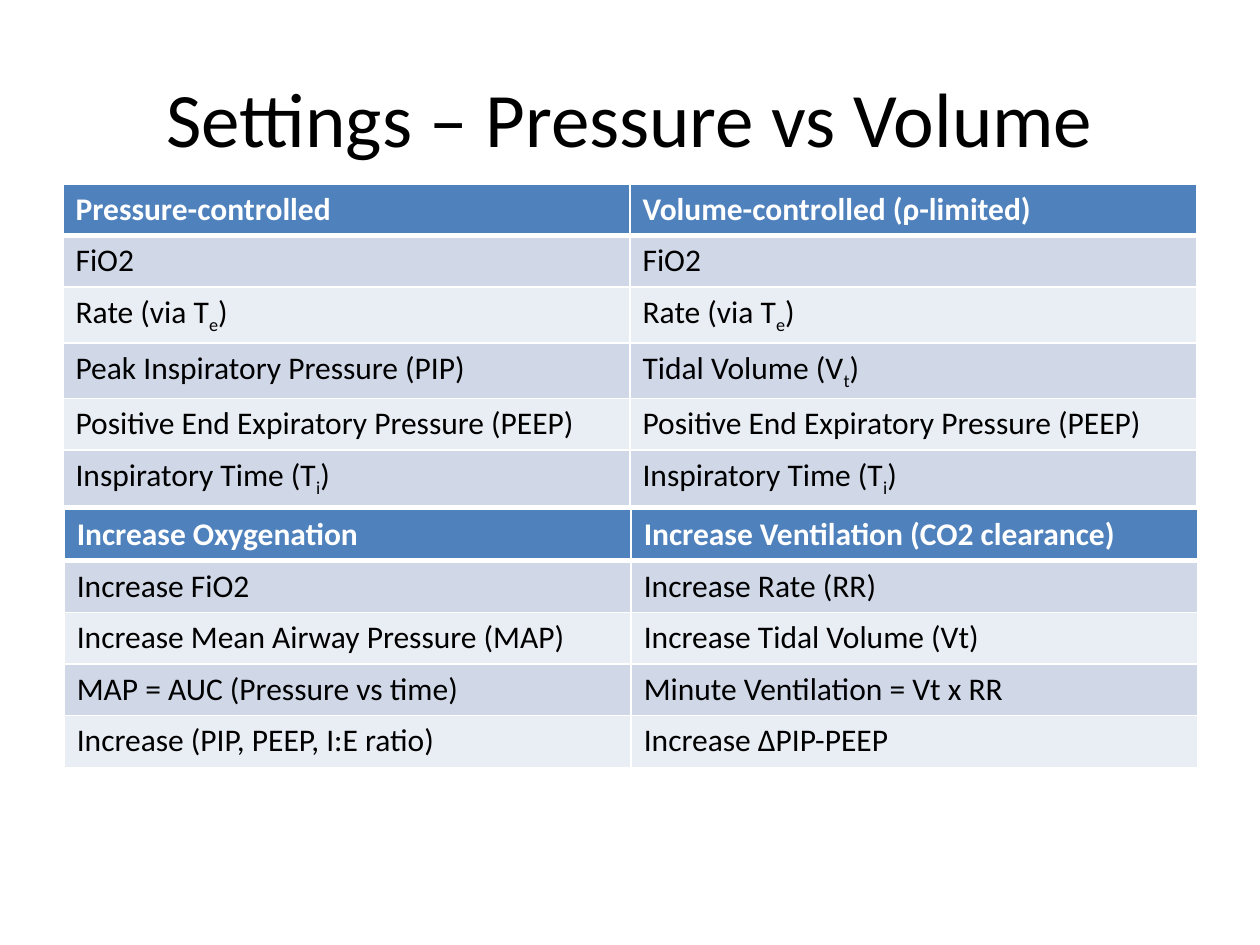
from lxml.etree import SubElement
from pptx import Presentation
from pptx.dml.color import RGBColor
from pptx.enum.text import MSO_ANCHOR, PP_ALIGN
from pptx.oxml.ns import qn
from pptx.util import Inches, Pt

TITLE = "Settings – Pressure vs Volume"

# Text between two bars is set as a subscript.
SETTINGS = [
    ("Pressure-controlled", "Volume-controlled (ρ-limited)"),
    ("FiO2", "FiO2"),
    ("Rate (via T|e|)", "Rate (via T|e|)"),
    ("Peak Inspiratory Pressure (PIP)", "Tidal Volume (V|t|)"),
    ("Positive End Expiratory Pressure (PEEP)",
     "Positive End Expiratory Pressure (PEEP)"),
    ("Inspiratory Time (T|i|)", "Inspiratory Time (T|i|)"),
]
GOALS = [
    ("Increase Oxygenation", "Increase Ventilation (CO2 clearance)"),
    ("Increase FiO2", "Increase Rate (RR)"),
    ("Increase Mean Airway Pressure (MAP)", "Increase Tidal Volume (Vt)"),
    ("MAP = AUC (Pressure vs time)", "Minute Ventilation = Vt x RR"),
    ("Increase (PIP, PEEP, I:E ratio)", "Increase ∆PIP-PEEP"),
]
TABLES = [(0.5, 1.46, SETTINGS), (0.51, 4.04, GOALS)]

COLORS = {"header": "4F81BD", "odd": "D0D8E8", "even": "E9EDF4",
          "light": "FFFFFF", "dark": "000000"}
FONT = "Calibri"
TABLE_WIDTH, ROW_HEIGHT = 9, 0.41
THIN, THICK = 1, 3


def color(name):
    return RGBColor.from_string(COLORS[name])


def style(para, size, color_name, bold=False):
    para.font.name = FONT
    para.font.size = Pt(size)
    para.font.bold = bold
    para.font.color.rgb = color(color_name)


def add_borders(cell, top, bottom):
    properties = cell._tc.get_or_add_tcPr()
    for side, width in (("L", THIN), ("R", THIN), ("T", top), ("B", bottom)):
        line = SubElement(properties, qn(f"a:ln{side}"), w=str(Pt(width)))
        fill = SubElement(line, qn("a:solidFill"))
        SubElement(fill, qn("a:srgbClr"), val=COLORS["light"])


def fill_cell(cell, text, row):
    header = row == 0
    add_borders(cell, THICK if row == 1 else THIN, THICK if header else THIN)
    cell.fill.solid()
    cell.fill.fore_color.rgb = color(
        "header" if header else "odd" if row % 2 else "even")
    para = cell.text_frame.paragraphs[0]
    style(para, 18, "light" if header else "dark", header)
    for index, part in enumerate(text.split("|")):
        span = para.add_run()
        span.text = part
        if index % 2:
            span._r.get_or_add_rPr().set("baseline", "-25000")


def add_grid(page, left, top, rows):
    grid = page.shapes.add_table(
        len(rows), len(rows[0]), Inches(left), Inches(top),
        Inches(TABLE_WIDTH), Inches(ROW_HEIGHT * len(rows))).table
    for row, texts in enumerate(rows):
        for column, text in enumerate(texts):
            fill_cell(grid.cell(row, column), text, row)


def main():
    deck = Presentation()
    deck.slide_width, deck.slide_height = Inches(10), Inches(7.5)
    page = deck.slides.add_slide(deck.slide_layouts[6])

    box = page.shapes.add_textbox(
        Inches(0.5), Inches(0.3), Inches(9), Inches(1.25))
    frame = box.text_frame
    frame.word_wrap = True
    frame.vertical_anchor = MSO_ANCHOR.MIDDLE
    para = frame.paragraphs[0]
    para.text = TITLE
    para.alignment = PP_ALIGN.CENTER
    style(para, 44, "dark")

    for left, top, rows in TABLES:
        add_grid(page, left, top, rows)
    deck.save("out.pptx")


if __name__ == "__main__":
    main()
